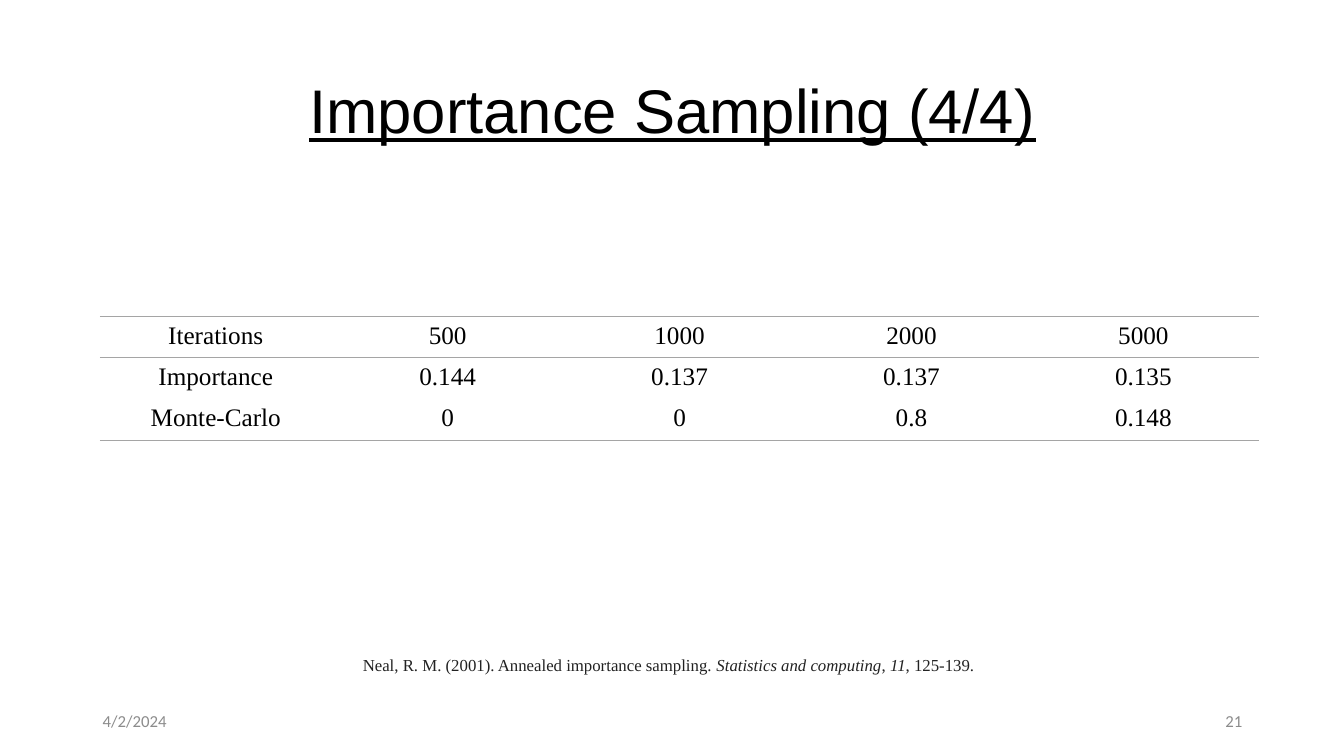
import pptx
import pptx.dml.color
import pptx.enum.text
import pptx.oxml
import pptx.oxml.ns
import pptx.util

Inches, Pt = pptx.util.Inches, pptx.util.Pt
ALIGN = pptx.enum.text.PP_ALIGN
ANCHOR = pptx.enum.text.MSO_ANCHOR
COLORS = {"text": "000000", "rule": "A5A5A5", "footer": "8C8C8C", "citation": "222222"}
SERIF = "Times New Roman"

RESULTS = [
    ["Iterations", "500", "1000", "2000", "5000"],
    ["Importance", "0.144", "0.137", "0.137", "0.135"],
    ["Monte-Carlo", "0", "0", "0.8", "0.148"],
]
CITATION = [
    ("Neal, R. M. (2001). Annealed importance sampling. ", False),
    ("Statistics and computing", True),
    (", ", False),
    ("11", True),
    (", 125-139.", False),
]


class SlideBuilder:
    def __init__(self, prs):
        self.s = prs.slides.add_slide(prs.slide_layouts[6])

    def style(self, r, size, font, color):
        r.font.size = Pt(size)
        r.font.name = font
        r.font.color.rgb = pptx.dml.color.RGBColor.from_string(COLORS[color])

    def text(self, box, parts, size, font, color, align=ALIGN.LEFT,
             anchor=ANCHOR.MIDDLE, wrap=True):
        """Add a text box of one paragraph; parts are (text, italic) pairs."""
        tf = self.s.shapes.add_textbox(*map(Inches, box)).text_frame
        tf.word_wrap = wrap
        tf.vertical_anchor = anchor
        p = tf.paragraphs[0]
        p.alignment = align
        for words, italic in parts:
            r = p.add_run()
            r.text = words
            r.font.italic = italic
            self.style(r, size, font, color)
        return p

    def borders(self, cell, ruled):
        """Draw the sides named in ruled and clear the others."""
        tcPr = cell._tc.get_or_add_tcPr()
        for i, side in enumerate("LRTB"):
            paint = "<a:noFill/>"
            if side in ruled:
                paint = f'<a:solidFill><a:srgbClr val="{COLORS["rule"]}"/></a:solidFill>'
            tcPr.insert(i, pptx.oxml.parse_xml(
                f'<a:ln{side} {pptx.oxml.ns.nsdecls("a")} w="{Pt(1)}">{paint}</a:ln{side}>'))

    def table(self, left, top, col_width, row_height, rows):
        n_rows, n_cols = len(rows), len(rows[0])
        table = self.s.shapes.add_table(
            n_rows, n_cols, Inches(left), Inches(top),
            Inches(col_width * n_cols), Inches(row_height * n_rows)).table
        table.first_row = table.horz_banding = False
        for i, row in enumerate(rows):
            table.rows[i].height = Inches(row_height)
            ruled = "TB" if i == 0 else "T" if i == 1 else ""
            if i == n_rows - 1:
                ruled += "B"
            for j, value in enumerate(row):
                cell = table.cell(i, j)
                cell.text_frame.text = value
                p = cell.text_frame.paragraphs[0]
                p.alignment = ALIGN.CENTER
                self.style(p.runs[0], 18, SERIF, "text")
                cell.fill.background()
                self.borders(cell, ruled)


def main():
    prs = pptx.Presentation()
    prs.slide_width, prs.slide_height = Inches(13.33), Inches(7.5)
    slide = SlideBuilder(prs)

    title = slide.text((0.92, 0.4, 11.5, 1.45), [("Importance Sampling (4/4)", False)],
                       44, "Arial", "text", ALIGN.CENTER)
    title.line_spacing = 0.9
    title.runs[0].font.underline = True

    slide.table(0.99, 3.14, 2.3, 0.41, RESULTS)

    for left, words, align in ((0.92, "4/2/2024", ALIGN.LEFT), (9.42, "21", ALIGN.RIGHT)):
        slide.text((left, 6.95, 3, 0.4), [(words, False)], 12, "Calibri", "footer", align)

    slide.text((3.5, 6.45, 6.34, 0.3), CITATION, 12, SERIF, "citation",
               anchor=ANCHOR.TOP, wrap=False)
    prs.save("out.pptx")


if __name__ == "__main__":
    main()
